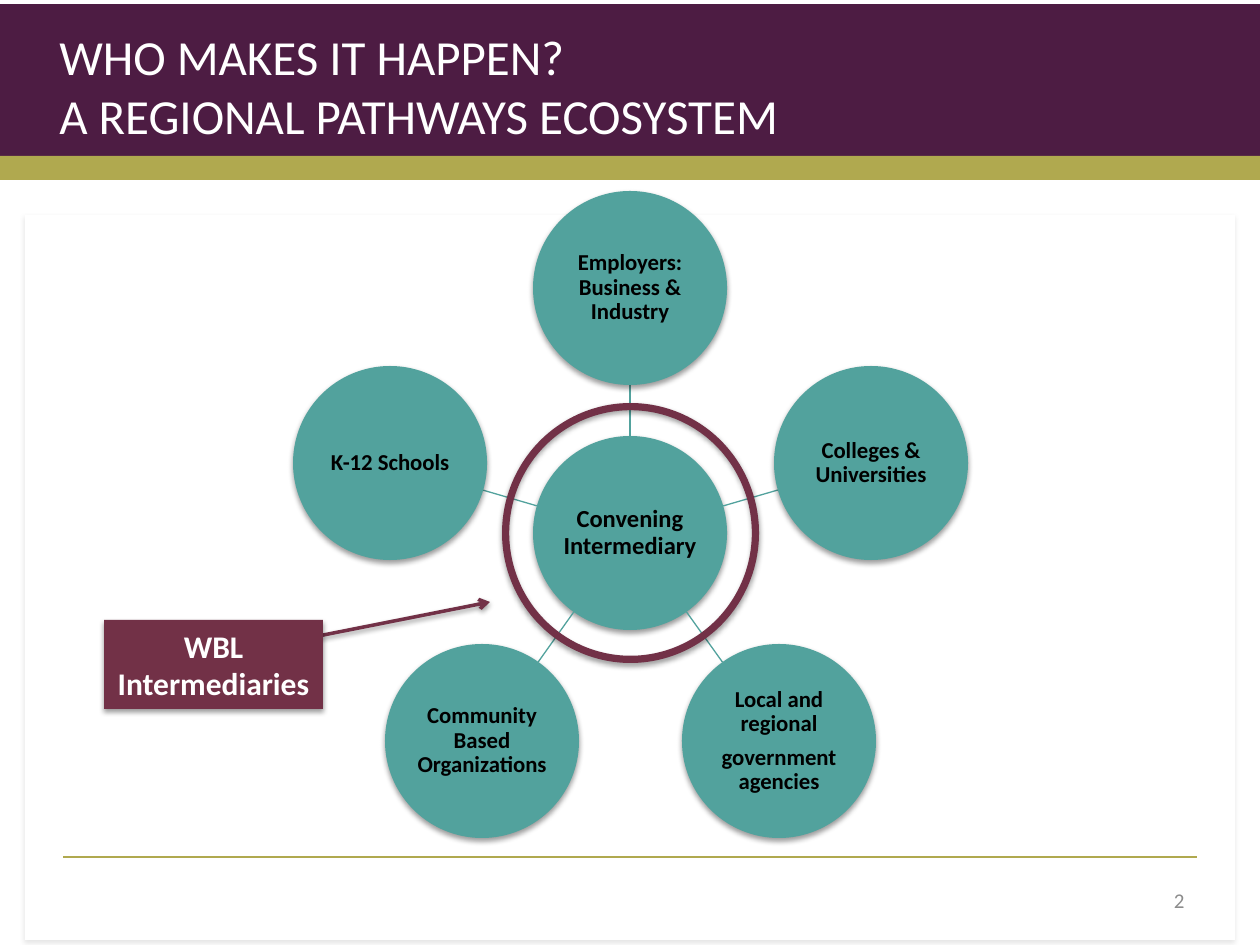
"""Build the regional pathways ecosystem slide."""
import math

from lxml import etree
from pptx import Presentation, util as u
from pptx.dml.color import RGBColor
from pptx.enum import shapes, text
from pptx.oxml import ns

SCALE = 914400 / 126
PURPLE, GOLD, TEAL, WINE = "4D1C43", "B0A94F", "52A29D", "723147"
WHITE, BLACK, GREY = "FFFFFF", "000000", "8C8C8C"
SOFT = {"alpha": 38, "distance": 1.6}
FAINT = {"alpha": 10, "distance": 1.8}
RADIUS = 97
HUB = (630, 533)
PARTNERS = [
    ((630, 288), ["Employers: Business & Industry"]),
    ((871, 463), ["Colleges & Universities"]),
    ((779, 741), ["Local and regional", "government agencies"]),
    ((482, 741), ["Community Based Organizations"]),
    ((390, 463), ["K-12 Schools"]),
]


def px(*lengths):
    """Turn pixel lengths into EMU."""
    return [u.Emu(round(length * SCALE)) for length in lengths]


def color(value):
    """Turn a hex string into a colour."""
    return RGBColor.from_string(value)


def set_all(target, values):
    """Set each named attribute on the target."""
    for name, value in values.items():
        setattr(target, name, value)


def add_effects(item, shadow=None):
    """Give an item its own effect list, with a downward shadow if wanted."""
    effects = etree.SubElement(item._element.spPr, ns.qn("a:effectLst"))
    if shadow:
        outer = etree.SubElement(
            effects, ns.qn("a:outerShdw"), blurRad=str(u.Pt(3.1)),
            dist=str(u.Pt(shadow["distance"])), dir="5400000", rotWithShape="0")
        tint = etree.SubElement(outer, ns.qn("a:srgbClr"), val=BLACK)
        etree.SubElement(tint, ns.qn("a:alpha"), val=str(shadow["alpha"] * 1000))


def write(shape, lines, font, paragraph_format=None, inset=None):
    """Fill a shape with one formatted paragraph per line."""
    frame = shape.text_frame
    set_all(frame, {"word_wrap": True, "vertical_anchor": text.MSO_ANCHOR.MIDDLE})
    if inset is not None:
        sides = ("left", "top", "right", "bottom")
        set_all(frame, {f"margin_{side}": px(inset)[0] for side in sides})
    frame.text = "\n".join(lines)
    size, hue, bold = font
    for paragraph in frame.paragraphs:
        set_all(paragraph, paragraph_format or {})
        set_all(paragraph.font, {"name": "Calibri", "size": u.Pt(size), "bold": bold})
        paragraph.font.color.rgb = color(hue)


def add_shape(slide, kind, box, fill, shadow=None):
    """Add a filled preset shape without an outline."""
    shape = slide.shapes.add_shape(kind, *px(*box))
    shape.fill.solid()
    shape.fill.fore_color.rgb = color(fill)
    shape.line.fill.background()
    add_effects(shape, shadow)
    return shape


def add_text(slide, box, lines, font, paragraph_format=None):
    """Add a text box."""
    write(slide.shapes.add_textbox(*px(*box)), lines, font, paragraph_format)


def add_line(slide, start, end, hue, width, shadow=None, arrow=False):
    """Add a straight line, with an arrowhead at its end if wanted."""
    line = slide.shapes.add_connector(shapes.MSO_CONNECTOR.STRAIGHT, *px(*start, *end))
    line.line.color.rgb = color(hue)
    line.line.width = u.Pt(width)
    if arrow:
        etree.SubElement(line.line._get_or_add_ln(), ns.qn("a:tailEnd"), type="arrow")
    add_effects(line, shadow)


def add_circle(slide, center, lines, size):
    """Add a labelled circle around a center."""
    x, y = center
    box = (x - RADIUS, y - RADIUS, 2 * RADIUS, 2 * RADIUS)
    circle = add_shape(slide, shapes.MSO_SHAPE.OVAL, box, TEAL, SOFT)
    spacing = {"alignment": text.PP_ALIGN.CENTER, "line_spacing": 0.9,
               "space_after": u.Pt(5)}
    write(circle, lines, (size, BLACK, True), spacing, inset=1)


def add_spoke(slide, center):
    """Join the rim of the hub to the rim of a partner circle."""
    angle = math.atan2(center[1] - HUB[1], center[0] - HUB[0])
    reach = RADIUS * math.cos(angle), RADIUS * math.sin(angle)
    start = [place + step for place, step in zip(HUB, reach)]
    end = [place - step for place, step in zip(center, reach)]
    add_line(slide, start, end, TEAL, 0.75)


def add_frame(slide):
    """Add the banner, panel, rule, title and slide number."""
    rectangle = shapes.MSO_SHAPE.RECTANGLE
    add_shape(slide, rectangle, (0, 4, 1260, 157), PURPLE)
    add_shape(slide, rectangle, (0, 156, 1260, 24), GOLD)
    add_shape(slide, rectangle, (25, 215, 1210, 725), WHITE, FAINT)
    add_line(slide, (63, 857), (1197, 857), GOLD, 1)
    title = ["WHO MAKES IT HAPPEN?", "A REGIONAL PATHWAYS ECOSYSTEM"]
    add_text(slide, (47, 37, 830, 97), title, (28, WHITE, False))
    add_text(slide, (903, 875, 294, 50), ["2"], (12, GREY, False),
             {"alignment": text.PP_ALIGN.RIGHT})


def add_ecosystem(slide):
    """Add the hub with its partner circles."""
    add_circle(slide, HUB, ["Convening Intermediary"], 14)
    for center, lines in PARTNERS:
        add_spoke(slide, center)
        add_circle(slide, center, lines, 13)


def add_callout(slide):
    """Add the ring around the hub and the label pointing at it."""
    ring = add_shape(slide, shapes.MSO_SHAPE.DONUT, (502, 403, 257, 260), WINE, SOFT)
    ring.adjustments[0] = 0.028
    add_line(slide, (273, 645), (490, 602), WINE, 2, SOFT, arrow=True)
    label = add_shape(slide, shapes.MSO_SHAPE.RECTANGLE, (104, 620, 219, 89), WINE, SOFT)
    write(label, ["WBL Intermediaries"], (18, WHITE, True),
          {"alignment": text.PP_ALIGN.CENTER})


def main():
    """Build and save the slide."""
    presentation = Presentation()
    width, height = px(1260, 945)
    set_all(presentation, {"slide_width": width, "slide_height": height})
    slide = presentation.slides.add_slide(presentation.slide_layouts[6])
    add_frame(slide)
    add_ecosystem(slide)
    add_callout(slide)
    presentation.save("out.pptx")


if __name__ == "__main__":
    main()
